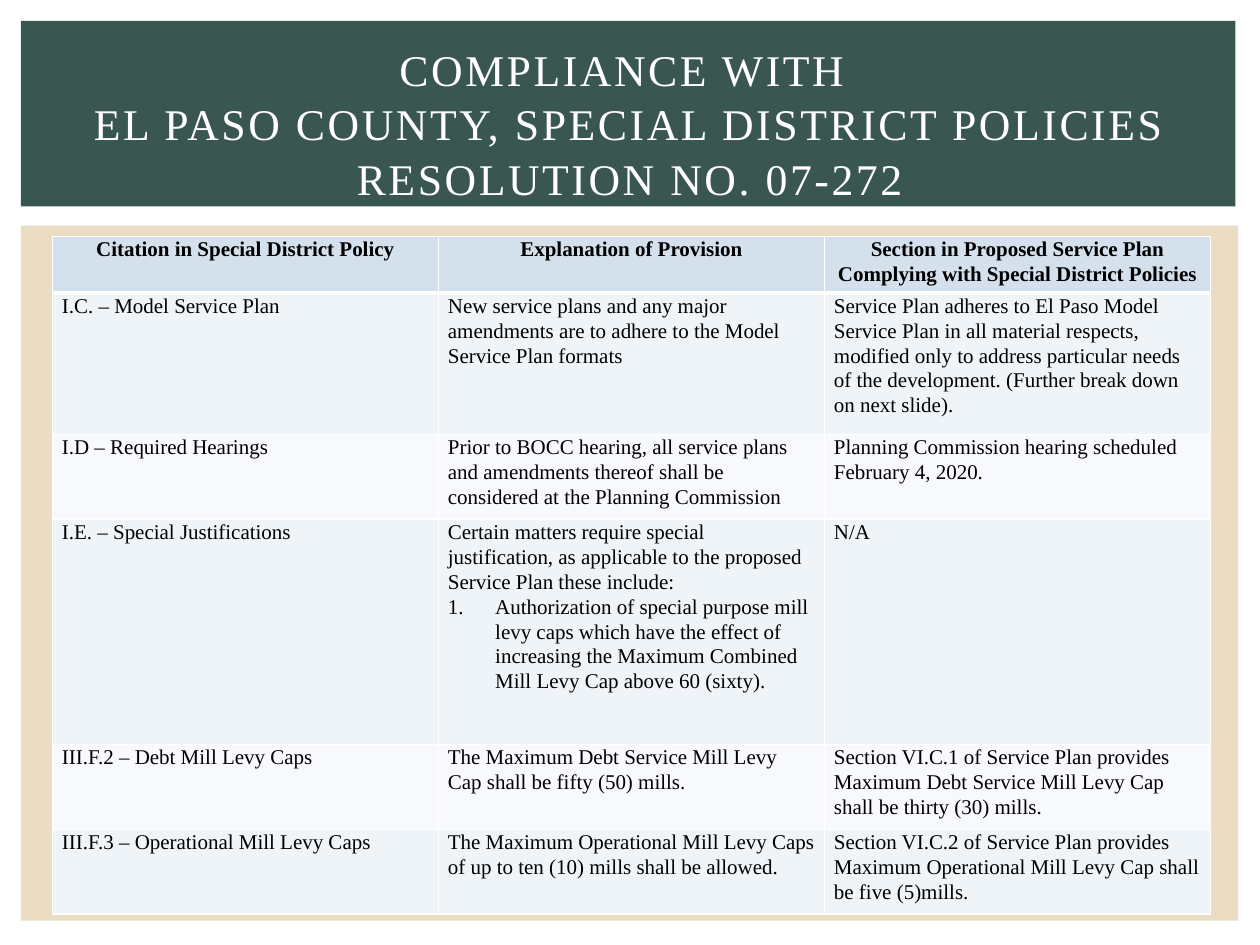
from pptx import Presentation
from pptx.dml.color import RGBColor
from pptx.enum.shapes import MSO_SHAPE
from pptx.enum.text import MSO_ANCHOR, MSO_AUTO_SIZE, PP_ALIGN
from pptx.oxml.ns import qn
from pptx.util import Pt
from lxml.etree import SubElement

FONT = "Times New Roman"
TITLE = ("COMPLIANCE WITH \vEL PASO COUNTY, SPECIAL DISTRICT POLICIES\v"
         "RESOLUTION NO. 07-272")
HEADER = ["Citation in Special District Policy", "Explanation of Provision",
          "Section in Proposed Service Plan Complying with Special District Policies"]
PROVISIONS = [
    ["I.C. – Model Service Plan",
     "New service plans and any major amendments are to adhere to the Model "
     "Service Plan formats",
     "Service Plan adheres to El Paso Model Service Plan in all material respects, "
     "modified only to address particular needs of the development. "
     "(Further break down on next slide)."],
    ["I.D – Required Hearings",
     "Prior to BOCC hearing, all service plans and amendments thereof shall be "
     "considered at the Planning Commission",
     "Planning Commission hearing scheduled February 4, 2020."],
    ["I.E. – Special Justifications",
     "Certain matters require special justification, as applicable to the proposed "
     "Service Plan these include:\n"
     "Authorization of special purpose mill levy caps which have the effect of "
     "increasing the Maximum Combined Mill Levy Cap above 60 (sixty).",
     "N/A"],
    ["III.F.2 – Debt Mill Levy Caps",
     "The Maximum Debt Service Mill Levy Cap shall be fifty (50) mills.",
     "Section VI.C.1 of Service Plan provides Maximum Debt Service Mill Levy Cap "
     "shall be thirty (30) mills."],
    ["III.F.3 – Operational Mill Levy Caps",
     "The Maximum Operational Mill Levy Caps of up to ten (10) mills shall be allowed.",
     "Section VI.C.2 of Service Plan provides Maximum Operational Mill Levy Cap "
     "shall be five (5)mills."],
]
ROW_HEIGHTS = [32.2, 80.9, 48.4, 128.9, 48.4, 48.4]


def color(value):
    return RGBColor.from_string(value)


def add_panel(slide, box, fill):
    panel = slide.shapes.add_shape(MSO_SHAPE.RECTANGLE, *map(Pt, box))
    panel.shadow.inherit = False
    panel.fill.solid()
    panel.fill.fore_color.rgb = color(fill)
    panel.line.fill.background()


def place_title(slide, box):
    title = slide.shapes.title
    title.left, title.top, title.width, title.height = map(Pt, box)
    # Bring the title in front of its panel
    title.element.getparent().append(title.element)
    frame = title.text_frame
    frame.text = TITLE
    frame.word_wrap = True
    frame.auto_size = MSO_AUTO_SIZE.NONE
    frame.vertical_anchor = MSO_ANCHOR.MIDDLE
    paragraph = frame.paragraphs[0]
    paragraph.alignment = PP_ALIGN.CENTER
    paragraph.line_spacing = 1.04
    paragraph.font.name = FONT
    paragraph.font.size = Pt(25)
    paragraph.font.color.rgb = color("FFFFFF")
    for run in paragraph.runs:
        run.font.language_id = None
        run.font.size = Pt(25)
        run.font.fill.solid()
        run.font.fill.fore_color.rgb = color("FFFFFF")
        run.font.name = FONT
        run._r.get_or_add_rPr().set("spc", "150")


def set_borders(cell, bottom_width):
    properties = cell._tc.get_or_add_tcPr()
    for side, width in (("L", 1), ("R", 1), ("T", 1), ("B", bottom_width)):
        line = SubElement(properties, qn(f"a:ln{side}"), w=str(Pt(width)))
        fill = SubElement(line, qn("a:solidFill"))
        SubElement(fill, qn("a:srgbClr"), val="FFFFFF")


def number_paragraph(paragraph):
    properties = paragraph._p.get_or_add_pPr()
    properties.set("marL", str(Pt(27)))
    properties.set("indent", str(Pt(-27)))
    SubElement(properties, qn("a:buFont"), typeface="+mj-lt")
    SubElement(properties, qn("a:buAutoNum"), type="arabicPeriod")


def fill_cell(cell, text, fill, is_header):
    cell.margin_left = cell.margin_right = Pt(5.4)
    cell.margin_top = cell.margin_bottom = 0
    set_borders(cell, 3 if is_header else 1)
    cell.fill.solid()
    cell.fill.fore_color.rgb = color(fill)
    cell.text = text
    for index, paragraph in enumerate(cell.text_frame.paragraphs):
        paragraph.line_spacing = 1.07
        paragraph.alignment = PP_ALIGN.CENTER if is_header else PP_ALIGN.LEFT
        if index > 0:
            number_paragraph(paragraph)
        for run in paragraph.runs:
            run.font.name = FONT
            run.font.size = Pt(12)
            run.font.bold = is_header
            run.font.color.rgb = color("000000")


def add_policy_table(slide, box):
    rows = [HEADER] + PROVISIONS
    table = slide.shapes.add_table(len(rows), len(HEADER), *map(Pt, box)).table
    for column in table.columns:
        column.width = Pt(box[2] / len(HEADER))
    for index, (texts, height) in enumerate(zip(rows, ROW_HEIGHTS)):
        table.rows[index].height = Pt(height)
        fill = "D4E1ED" if index == 0 else ("F7F9FC", "EFF4F8")[index % 2]
        for column, text in enumerate(texts):
            fill_cell(table.cell(index, column), text, fill, index == 0)


def build_slide(presentation):
    slide = presentation.slides.add_slide(presentation.slide_layouts[5])
    add_panel(slide, (12, 128.9, 695.5, 397.2), "EBDDC3")
    add_panel(slide, (12, 12, 694, 106), "395750")
    add_policy_table(slide, (30, 135.2, 661.8, 387.2))
    place_title(slide, (30, 28.3, 660, 83))


def main():
    presentation = Presentation()
    presentation.slide_width, presentation.slide_height = Pt(720), Pt(540)
    build_slide(presentation)
    presentation.save("out.pptx")


if __name__ == "__main__":
    main()
